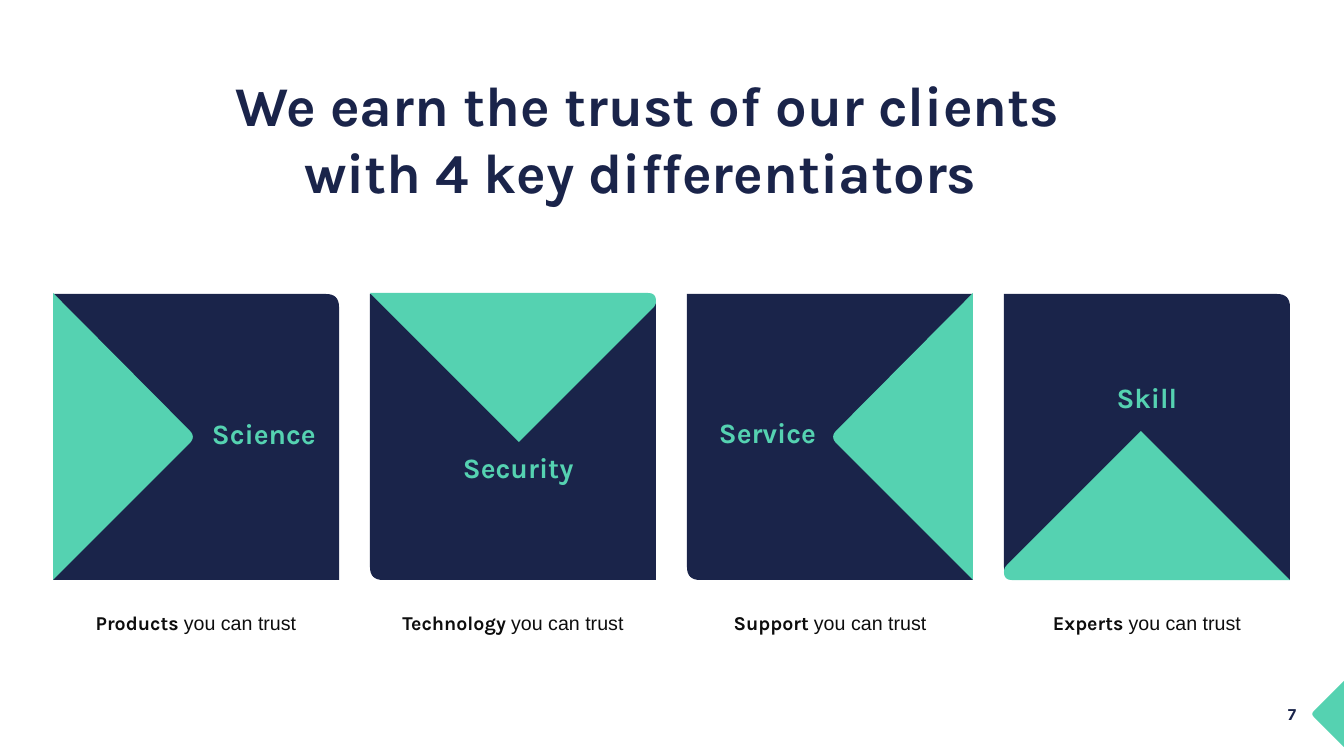
from dataclasses import dataclass

from pptx import Presentation
from pptx.dml.color import RGBColor
from pptx.enum.text import MSO_ANCHOR, MSO_AUTO_SIZE, PP_ALIGN
from pptx.util import Emu, Pt

LEFT, CENTER = PP_ALIGN.LEFT, PP_ALIGN.CENTER
TOP = MSO_ANCHOR.TOP
NO_FIT = MSO_AUTO_SIZE.NONE
EMU_PER_PX = 914400 / 100.8
TITLE_ONLY = 5


@dataclass(frozen=True)
class Theme:
    navy: RGBColor = RGBColor(0x1A, 0x24, 0x4A)
    mint: RGBColor = RGBColor(0x55, 0xD2, 0xB1)
    ink: RGBColor = RGBColor(0x0D, 0x0D, 0x0D)
    heading_font: str = "Karla"
    body_font: str = "Arial"
    title_pt: int = 40
    label_pt: int = 20
    caption_pt: int = 14
    number_pt: int = 12


THEME = Theme()

# Tile grid
TILE_X, TILE_Y, TILE, PITCH = 53, 294, 286, 317
CAPTION_Y = 606
CORNER = 13
CURVE_STEPS = 8

# Triangles inside a tile: (x, y, corner cut)
POINT_RIGHT = [(0, -1, 0), (143, 143, 9), (0, 286, 0)]
POINT_LEFT = [(TILE - x, y, cut) for x, y, cut in POINT_RIGHT]
POINT_DOWN = [(0, -1, 0), (286, -1, 8), (286, 11, 4), (149, 148, 0)]
POINT_UP = [(TILE - x, TILE - 1 - y, cut) for x, y, cut in POINT_DOWN]

# Rounded corners, triangle, label, label offset, alignment, caption word
TILES = [
    ("tr", POINT_RIGHT, "Science", (159, 118), LEFT, "Products"),
    ("tr bl", POINT_DOWN, "Security", (93, 152), LEFT, "Technology"),
    ("bl", POINT_LEFT, "Service", (32, 117), LEFT, "Support"),
    ("tr bl", POINT_UP, "Skill", (82, 82), CENTER, "Experts"),
]


def px(n):
    return Emu(round(n * EMU_PER_PX))


def toward(a, b, distance):
    dx, dy = b[0] - a[0], b[1] - a[1]
    k = distance / (dx * dx + dy * dy) ** 0.5
    return a[0] + dx * k, a[1] + dy * k


def round_corners(corners):
    """Replace each corner that has a cut by points along a curve."""
    points = []
    for i, corner in enumerate(corners):
        x, y, cut = corner
        if not cut:
            points.append((x, y))
            continue
        start = toward(corner, corners[i - 1], cut)
        end = toward(corner, corners[(i + 1) % len(corners)], cut)
        for step in range(CURVE_STEPS + 1):
            t = step / CURVE_STEPS
            a, b, c = (1 - t) ** 2, 2 * t * (1 - t), t * t
            points.append((a * start[0] + b * x + c * end[0],
                           a * start[1] + b * y + c * end[1]))
    return points


def add_polygon(s, corners, color, left=0, top=0):
    points = [(px(left + x), px(top + y)) for x, y in round_corners(corners)]
    builder = s.shapes.build_freeform(*points[0])
    builder.add_line_segments(points[1:], close=True)
    sp = builder.convert_to_shape()
    sp.shadow.inherit = False
    sp.fill.solid()
    sp.fill.fore_color.rgb = color
    sp.line.fill.background()


def style_run(r, size, color, font=THEME.heading_font, bold=True):
    r.font.size = Pt(size)
    r.font.name = font
    r.font.bold = bold
    r.font.color.rgb = color


def add_text(s, box, text, size, color, align=LEFT, side_inset=10):
    sp = s.shapes.add_textbox(*map(px, box))
    tf = sp.text_frame
    tf.word_wrap = True
    tf.margin_left = tf.margin_right = px(side_inset)
    tf.text = text
    p = tf.paragraphs[0]
    p.alignment = align
    style_run(p.runs[0], size, color)
    return p


def add_title(s, text):
    sp = s.shapes.title
    sp.left, sp.top, sp.width, sp.height = map(px, (179, 65, 937, 146))
    tf = sp.text_frame
    tf.text = text
    tf.word_wrap = True
    tf.auto_size = NO_FIT
    tf.vertical_anchor = TOP
    p = tf.paragraphs[0]
    p.alignment = CENTER
    p.line_spacing = 1.0
    p.space_before = Pt(0)
    style_run(p.runs[0], THEME.title_pt, THEME.navy)


def add_tile(s, left, rounded, triangle, label, offset, align):
    tr = CORNER if "tr" in rounded else 0
    bl = CORNER if "bl" in rounded else 0
    square = [(0, 0, 0), (TILE, 0, tr), (TILE, TILE, 0), (0, TILE, bl)]
    add_polygon(s, square, THEME.navy, left, TILE_Y)
    add_polygon(s, triangle, THEME.mint, left, TILE_Y)
    box = (left + offset[0], TILE_Y + offset[1], 122, 44)
    add_text(s, box, label, THEME.label_pt, THEME.mint, align, side_inset=0)


def add_caption(s, left, word):
    p = add_text(s, (left, CAPTION_Y, TILE, 34), f"{word} ",
                 THEME.caption_pt, THEME.ink, CENTER)
    r = p.add_run()
    r.text = "you can trust"
    style_run(r, THEME.caption_pt, THEME.ink, THEME.body_font, bold=False)


def add_page_marker(s, number):
    add_polygon(s, [(1344, 681, 0), (1311, 714, 4), (1344, 747, 0)], THEME.mint)
    add_text(s, (1278, 699, 40, 30), number, THEME.number_pt, THEME.navy)


def main():
    prs = Presentation()
    prs.slide_width, prs.slide_height = px(1344), px(756)
    s = prs.slides.add_slide(prs.slide_layouts[TITLE_ONLY])

    # Heading; its closing space sets the centring of the second line
    add_title(s, "We earn the trust of our clients with 4 key differentiators ")

    # Four differentiators with captions
    for i, (*tile, word) in enumerate(TILES):
        left = TILE_X + i * PITCH
        add_tile(s, left, *tile)
        add_caption(s, left, word)

    # Page number
    add_page_marker(s, "7")
    prs.save("out.pptx")


if __name__ == "__main__":
    main()
